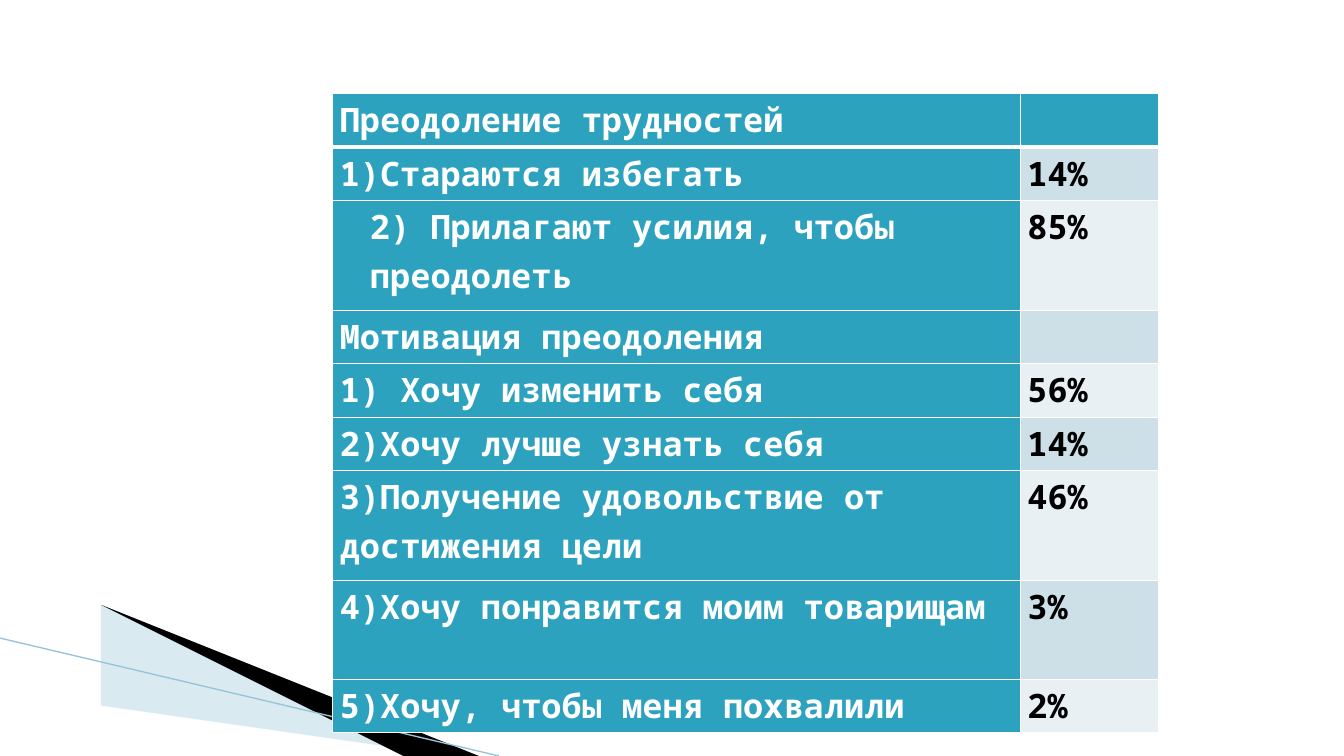
from dataclasses import dataclass

from lxml.etree import SubElement
from pptx import Presentation
from pptx.dml.color import RGBColor
from pptx.enum.shapes import MSO_CONNECTOR as Connector
from pptx.oxml.ns import qn
from pptx.util import Inches, Pt

NUMBERED, INDENTED = "numbered", "indented"
SURVEY = [
    ("Преодоление трудностей", "", None, 0.53),
    ("Стараются избегать", "14%", NUMBERED, 0.53),
    ("2) Прилагают усилия, чтобы преодолеть", "85%", INDENTED, 1.09),
    ("Мотивация преодоления", "", None, 0.53),
    ("1) Хочу изменить себя", "56%", None, 0.53),
    ("2)Хочу лучше узнать себя", "14%", None, 0.53),
    ("3)Получение удовольствие от достижения цели", "46%", None, 1.09),
    ("4)Хочу понравится моим товарищам", "3%", None, 0.98),
    ("5)Хочу, чтобы меня похвалили", "2%", None, 0.53),
]
COLUMNS = (6.82, 1.37)
TABLE_LEFT, TABLE_TOP = 3.3, 0.93
PALE_WEDGE = [(0.73, 6.51), (7.93, 7.5), (6.08, 7.5), (0.73, 6.5)]
BLACK_WEDGE = [(0.71, 6.49), (6.09, 7.5), (4.96, 7.5), (0.72, 6.5)]
EDGE = (0, 6.33, 4.95, 7.5)


@dataclass(frozen=True)
class Theme:
    font: str = "Noto Sans Mono"
    size: int = 24
    spacing: float = 1.07
    teal: str = "2DA2BF"
    bands: tuple = ("E8F0F4", "CDE0E8")
    white: str = "FFFFFF"
    black: str = "000000"
    wedge: str = "A0CBDC"
    edge: str = "97C5D8"


THEME = Theme()


def paint(fill, color):
    fill.solid()
    fill.fore_color.rgb = RGBColor.from_string(color)


def write(cell, text, color, layout=None):
    cell.margin_left = cell.margin_right = Inches(0.07)
    cell.margin_top = cell.margin_bottom = 0
    paragraph = cell.text_frame.paragraphs[0]
    paragraph.line_spacing = THEME.spacing
    properties = paragraph._p.get_or_add_pPr()
    if layout == NUMBERED:
        properties.set("marL", str(Inches(0.38)))
        properties.set("indent", str(-Inches(0.38)))
        SubElement(properties, qn("a:buFont"), typeface=THEME.font)
        SubElement(properties, qn("a:buAutoNum"), type="arabicParenR")
    elif layout == INDENTED:
        properties.set("marL", str(Inches(0.3)))
    paragraph.font.size = Pt(THEME.size)
    if text:
        run = paragraph.add_run()
        run.text = text
        run.font.name = THEME.font
        run.font.size = Pt(THEME.size)
        run.font.bold = True
        run.font.color.rgb = RGBColor.from_string(color)


def border(cell, top, bottom):
    properties = cell._tc.get_or_add_tcPr()
    widths = {"lnL": 1, "lnR": 1, "lnT": top, "lnB": bottom}
    for position, (side, width) in enumerate(widths.items()):
        line = SubElement(properties, qn(f"a:{side}"), w=str(Pt(width)))
        SubElement(SubElement(line, qn("a:solidFill")), qn("a:srgbClr"), val=THEME.white)
        properties.insert(position, line)


def add_wedge(slide, points, color, opacity=100):
    builder = slide.shapes.build_freeform(*points[0], scale=Inches(1))
    builder.add_line_segments(points[1:], close=True)
    wedge = builder.convert_to_shape()
    wedge.shadow.inherit = False
    wedge.line.fill.background()
    paint(wedge.fill, color)
    if opacity < 100:
        tint = wedge._element.spPr.find(qn("a:solidFill"))[0]
        SubElement(tint, qn("a:alpha"), val=str(opacity * 1000))


def add_edge(slide):
    edge = slide.shapes.add_connector(Connector.STRAIGHT, *map(Inches, EDGE))
    edge.line.width = Pt(0.95)
    edge.line.color.rgb = RGBColor.from_string(THEME.edge)
    SubElement(edge._element.spPr, qn("a:effectLst"))


def add_survey(slide):
    height = sum(row[-1] for row in SURVEY)
    table = slide.shapes.add_table(
        len(SURVEY), len(COLUMNS), Inches(TABLE_LEFT), Inches(TABLE_TOP),
        Inches(sum(COLUMNS)), Inches(height)).table
    for column, width in zip(table.columns, COLUMNS):
        column.width = Inches(width)
    for index, (answer, share, layout, row_height) in enumerate(SURVEY):
        table.rows[index].height = Inches(row_height)
        answer_cell, share_cell = table.cell(index, 0), table.cell(index, 1)
        write(answer_cell, answer, THEME.white, layout)
        write(share_cell, share, THEME.black)
        paint(answer_cell.fill, THEME.teal)
        paint(share_cell.fill, THEME.bands[index % 2] if index else THEME.teal)
        for cell in (answer_cell, share_cell):
            border(cell, top=3 if index == 1 else 1, bottom=1 if index else 3)


def main():
    deck = Presentation()
    deck.slide_width, deck.slide_height = Inches(13.33), Inches(7.5)
    slide = deck.slides.add_slide(deck.slide_layouts[6])
    add_wedge(slide, PALE_WEDGE, THEME.wedge, opacity=40)
    add_wedge(slide, BLACK_WEDGE, THEME.black)
    add_edge(slide)
    add_survey(slide)
    deck.save("out.pptx")


if __name__ == "__main__":
    main()
